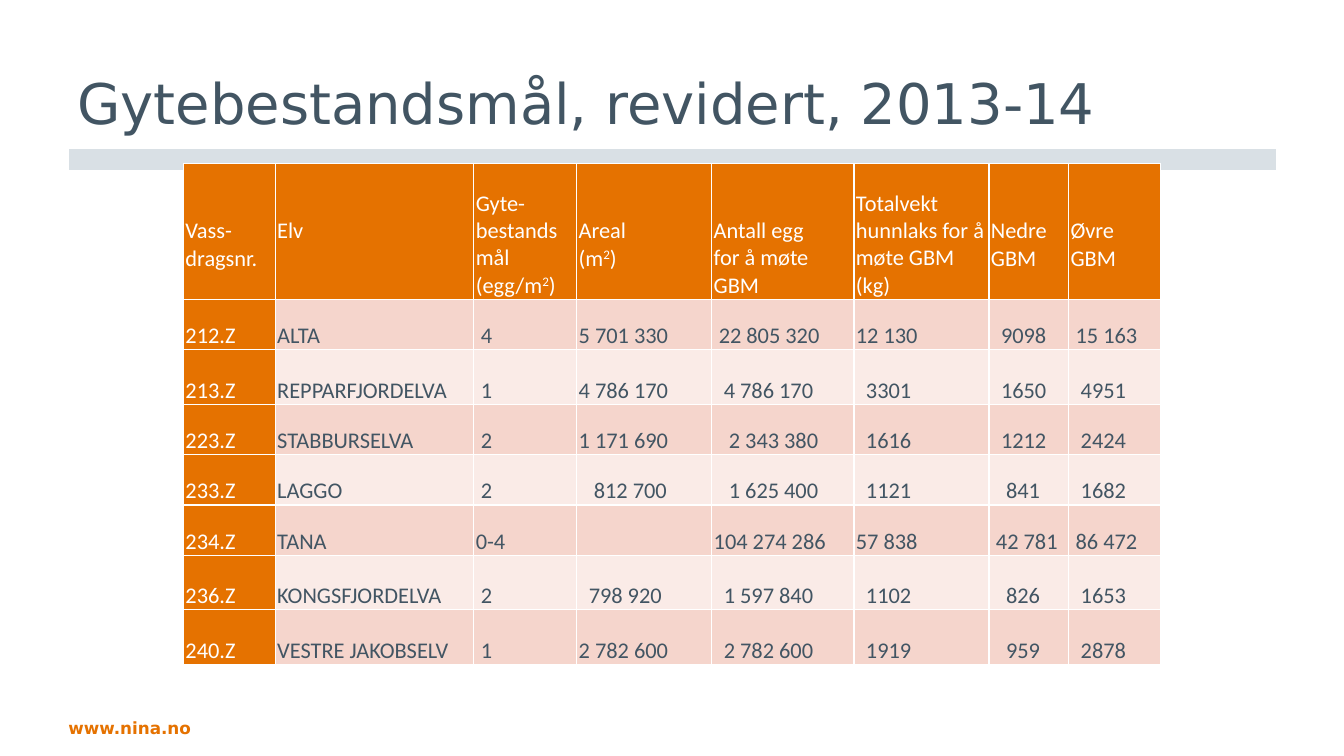
from lxml.etree import SubElement
from pptx import Presentation
from pptx.dml.color import RGBColor
from pptx.enum.shapes import MSO_CONNECTOR
from pptx.enum.text import MSO_ANCHOR
from pptx.oxml.ns import qn
from pptx.util import Inches, Pt

COLUMN_SHARES = [6.83, 14.78, 7.65, 10.05, 10.58, 10.05, 5.93, 6.83]
ROW_SHARES = [18, 6.67, 7.2, 6.67, 6.67, 6.67, 7.2, 7.2]
HEADINGS = [
    (["Vass-dragsnr."], 1),
    (["Elv"], 2),
    (["Gyte-bestandsmål (egg/m^2^)"], 0),
    (["Areal", "(m^2^)"], 1),
    (["Antall egg", "for å møte", "GBM"], 0),
    (["Totalvekt hunnlaks for å møte GBM (kg)"], 0),
    (["Nedre", "GBM"], 1),
    (["Øvre", "GBM"], 1),
]
RIVERS = [
    (["212.Z", "ALTA", "4", "5 701 330", "22 805 320", "12 130", "9098", "15 163"], "00101021"),
    (["213.Z", "REPPARFJORDELVA", "1", "4 786 170", "4 786 170", "3301", "1650", "4951"], "00102222"),
    (["223.Z", "STABBURSELVA", "2", "1 171 690", "2 343 380", "1616", "1212", "2424"], "00103222"),
    (["233.Z", "LAGGO", "2", "812 700", "1 625 400", "1121", "841", "1682"], "00133232"),
    (["234.Z", "TANA", "0-4", "", "104 274 286", "57 838", "42 781", "86 472"], "00000011"),
    (["236.Z", "KONGSFJORDELVA", "2", "798 920", "1 597 840", "1102", "826", "1653"], "00122232"),
    (["240.Z", "VESTRE JAKOBSELV", "1", "2 782 600", "2 782 600", "1919", "959", "2878"], "00102232"),
]


def color(code):
    """Turn a hex string into a colour."""
    return RGBColor.from_string(code)


def apply(target, formats):
    """Set each named format on the target."""
    for name, value in formats.items():
        setattr(target, name, value)


class SlideBuilder:
    """Holds the style and the current slide, with lengths in percent of the slide."""

    ORANGE, SLATE, GREY, WHITE = "E57200", "425563", "D9E0E5", "FFFFFF"
    BANDS = ["F5D5CC", "FAEBE7"]
    DISPLAY = "DejaVu Sans"
    CELL_FONT = {"name": "Calibri", "size": Pt(16)}
    CELL_INSET, INDENT_STEP, HEADING_LINE = 0.02, 0.05, 0.27

    def __init__(self, deck):
        """Add a blank slide to the deck."""
        self.deck = deck
        self.slide = deck.slides.add_slide(deck.slide_layouts[6])

    def x(self, share):
        """Return a share of the slide's width."""
        return int(self.deck.slide_width * share / 100)

    def y(self, share):
        """Return a share of the slide's height."""
        return int(self.deck.slide_height * share / 100)

    def add_runs(self, paragraph, words, font, ink):
        """Add words as runs, raising the parts between carets."""
        for position, part in enumerate(words.split("^")):
            run = paragraph.add_run()
            run.text = part
            apply(run.font, font)
            run.font.color.rgb = color(ink)
            if position % 2:
                run._r.get_or_add_rPr().set("baseline", "30000")

    def rule(self, left, right, height, weight):
        """Draw a square-ended horizontal rule."""
        band = self.slide.shapes.add_connector(
            MSO_CONNECTOR.STRAIGHT, self.x(left), self.y(height), self.x(right), self.y(height))
        band.line.color.rgb = color(self.GREY)
        band.line.width = Pt(weight)
        properties = band._element.spPr
        properties.find(qn("a:ln")).set("cap", "sq")
        SubElement(properties, qn("a:effectLst"))

    def text(self, box, words, font, ink, anchor=MSO_ANCHOR.TOP):
        """Add one line of text in a box."""
        left, top, width, height = box
        frame = self.slide.shapes.add_textbox(
            self.x(left), self.y(top), self.x(width), self.y(height)).text_frame
        apply(frame, {"word_wrap": True, "vertical_anchor": anchor})
        self.add_runs(frame.paragraphs[0], words, {"name": self.DISPLAY, **font}, ink)

    def borders(self, cell):
        """Give a cell thin white borders on all sides."""
        properties = cell._tc.get_or_add_tcPr()
        for position, side in enumerate(("lnL", "lnR", "lnT", "lnB")):
            edge = properties.makeelement(qn(f"a:{side}"), {"w": str(Pt(1))})
            SubElement(SubElement(edge, qn("a:solidFill")), qn("a:srgbClr"), val=self.WHITE)
            properties.insert(position, edge)

    def cell(self, cell, lines, fill, ink, indent=0, lift=0, spacing=1.0):
        """Fill one table cell and add its lines."""
        apply(cell, {
            "vertical_anchor": MSO_ANCHOR.BOTTOM,
            "margin_left": Inches(self.CELL_INSET + self.INDENT_STEP * indent),
            "margin_right": Inches(self.CELL_INSET),
            "margin_top": 0,
            "margin_bottom": Inches(self.HEADING_LINE * lift),
        })
        cell.fill.solid()
        cell.fill.fore_color.rgb = color(fill)
        self.borders(cell)
        frame = cell.text_frame
        for position, line in enumerate(lines):
            paragraph = frame.add_paragraph() if position else frame.paragraphs[0]
            paragraph.line_spacing = spacing
            self.add_runs(paragraph, line, self.CELL_FONT, ink)

    def table(self, left, top, headings, rivers):
        """Add the table of spawning targets by river."""
        grid = self.slide.shapes.add_table(
            len(ROW_SHARES), len(COLUMN_SHARES), self.x(left), self.y(top),
            self.x(sum(COLUMN_SHARES)), self.y(sum(ROW_SHARES))).table
        grid.horz_banding = False
        for column, share in zip(grid.columns, COLUMN_SHARES):
            column.width = self.x(share)
        for row, share in zip(grid.rows, ROW_SHARES):
            row.height = self.y(share)
        for column, (lines, lift) in enumerate(headings):
            self.cell(grid.cell(0, column), lines, self.ORANGE, self.WHITE, lift=lift)
        for row, (values, indents) in enumerate(rivers, 1):
            for column, (value, indent) in enumerate(zip(values, indents)):
                fill, ink = (self.BANDS[(row - 1) % 2], self.SLATE) if column else (self.ORANGE, self.WHITE)
                lines = [value] if value else []
                self.cell(grid.cell(row, column), lines, fill, ink, int(indent), spacing=1.15)


def main():
    """Build and save the slide."""
    deck = Presentation()
    apply(deck, {"slide_width": Inches(13.33), "slide_height": Inches(7.5)})
    builder = SlideBuilder(deck)
    builder.rule(5.93, 94.15, 21.07, 15)
    builder.text((4.35, 94.27, 17.33, 4), "www.nina.no",
                 {"size": Pt(12), "bold": True}, builder.ORANGE)
    builder.text((5.03, 3.47, 90.02, 15.2), "Gytebestandsmål, revidert, 2013-14",
                 {"size": Pt(40)}, builder.SLATE, MSO_ANCHOR.BOTTOM)
    builder.table(13.65, 21.6, HEADINGS, RIVERS)
    deck.save("out.pptx")


if __name__ == "__main__":
    main()
